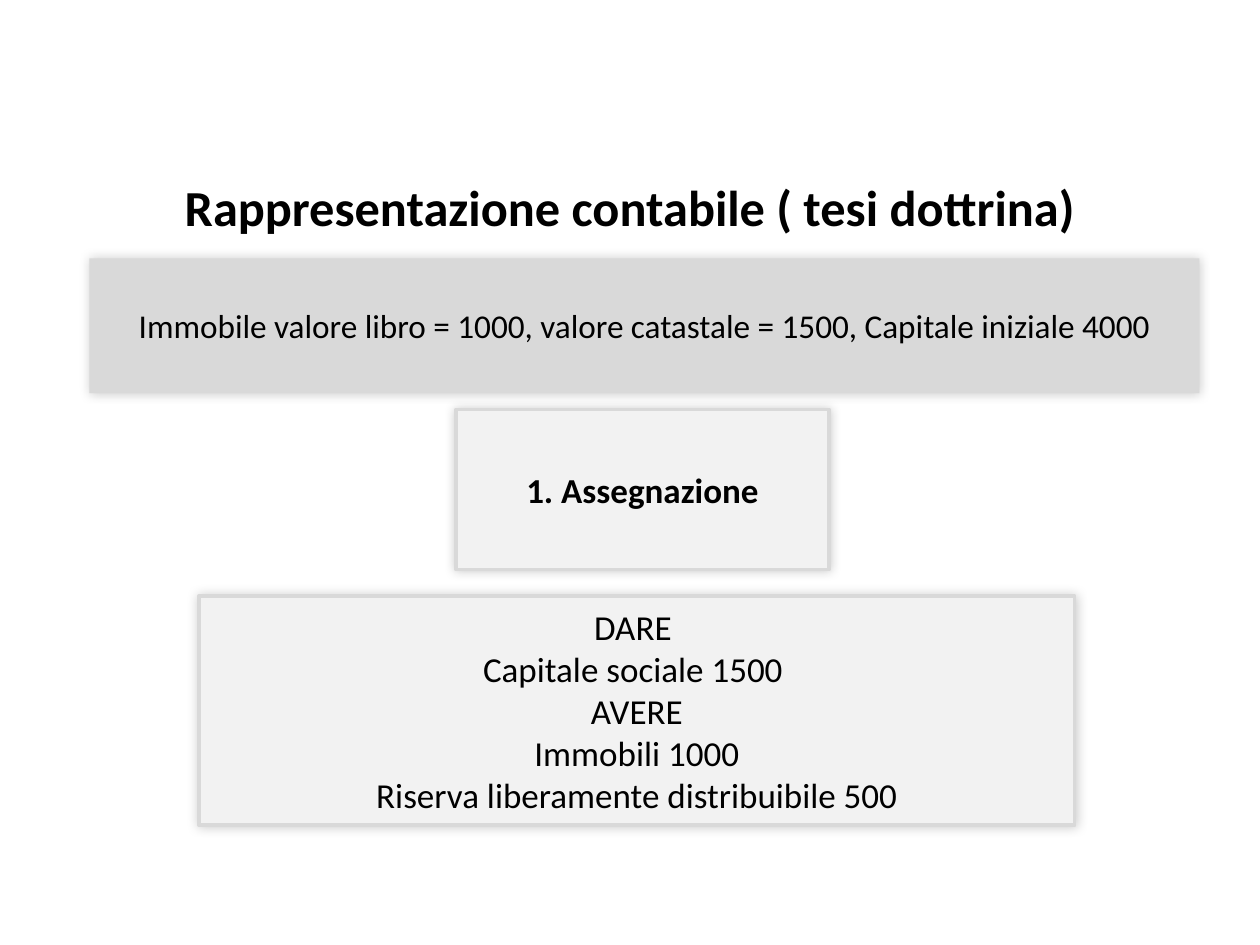
from dataclasses import dataclass

import pptx
import pptx.dml.color
import pptx.enum.shapes
import pptx.enum.text
import pptx.oxml
import pptx.oxml.ns
import pptx.util
from pptx.util import Inches

COLORS = {"text": "000000", "band": "D9D9D9", "panel": "F2F2F2", "border": "D9D9D9"}
FONT = "Calibri"


@dataclass(frozen=True)
class Box:
    left: float
    top: float
    width: float
    height: float
    lines: tuple[str, ...]
    size: float
    bold: bool = False
    fill: str = "panel"
    bordered: bool = True


TITLE = Box(0, 1.34, 10, 0.6, ("Rappresentazione contabile ( tesi dottrina)",), 28.8, bold=True)
BOXES = (
    Box(0.71, 2.05, 8.81, 1.07,
        ("Immobile valore libro = 1000, valore catastale = 1500, Capitale iniziale 4000",),
        19, fill="band", bordered=False),
    Box(3.62, 3.25, 2.96, 1.27, ("1. Assegnazione",), 20, bold=True),
    Box(1.58, 4.73, 6.95, 1.82,
        ("DARE ", "Capitale sociale 1500 ", "AVERE", "Immobili 1000",
         "Riserva liberamente distribuibile 500"), 20),
)


def color(name: str) -> pptx.dml.color.RGBColor:
    return pptx.dml.color.RGBColor.from_string(COLORS[name])


def bounds(box: Box) -> tuple[int, ...]:
    return tuple(Inches(value) for value in (box.left, box.top, box.width, box.height))


def write_text(shape, box: Box) -> None:
    frame = shape.text_frame
    frame.word_wrap = True
    frame.vertical_anchor = pptx.enum.text.MSO_ANCHOR.MIDDLE
    frame.text = "\n".join(box.lines)
    for paragraph in frame.paragraphs:
        paragraph.alignment = pptx.enum.text.PP_ALIGN.CENTER
        paragraph.font.name = FONT
        paragraph.font.size = pptx.util.Pt(box.size)
        paragraph.font.bold = box.bold
        paragraph.font.color.rgb = color("text")


def add_soft_shadow(shape) -> None:
    shape.shadow.inherit = False
    effects = shape._element.spPr.find(pptx.oxml.ns.qn("a:effectLst"))
    effects.append(pptx.oxml.parse_xml(
        f'<a:outerShdw {pptx.oxml.ns.nsdecls("a")} blurRad="{pptx.util.Pt(6)}" dist="0" '
        f'dir="{225 * 60000}" rotWithShape="0"><a:srgbClr val="{COLORS["text"]}">'
        '<a:alpha val="20000"/></a:srgbClr></a:outerShdw>'))


def add_box(slide, box: Box) -> None:
    shape = slide.shapes.add_shape(pptx.enum.shapes.MSO_SHAPE.RECTANGLE, *bounds(box))
    shape.fill.solid()
    shape.fill.fore_color.rgb = color(box.fill)
    if box.bordered:
        shape.line.color.rgb = color("border")
        shape.line.width = pptx.util.Pt(2)
    else:
        shape.line.fill.background()
    add_soft_shadow(shape)
    write_text(shape, box)


def main() -> None:
    presentation = pptx.Presentation()
    presentation.slide_width = Inches(10)
    presentation.slide_height = Inches(7.5)
    slide = presentation.slides.add_slide(presentation.slide_layouts[6])
    write_text(slide.shapes.add_textbox(*bounds(TITLE)), TITLE)
    for box in BOXES:
        add_box(slide, box)
    presentation.save("out.pptx")


if __name__ == "__main__":
    main()
